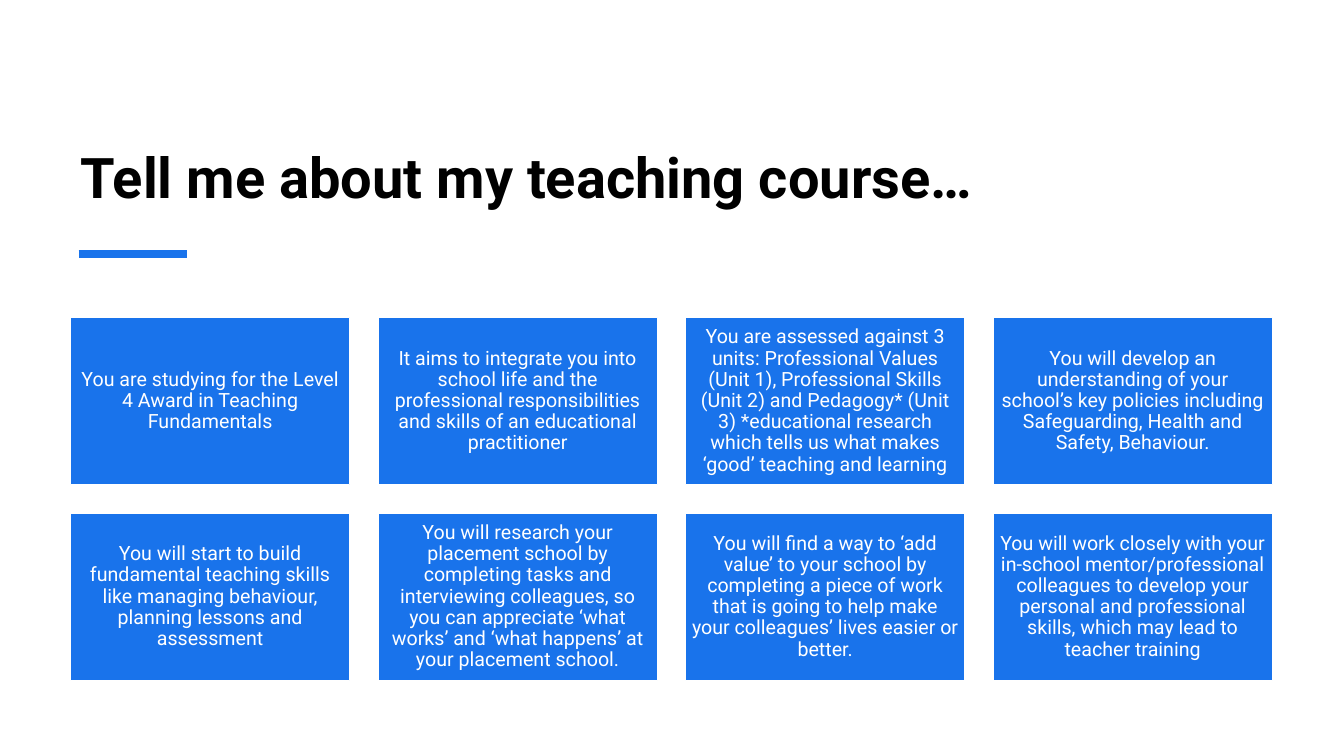
from dataclasses import dataclass

from lxml import etree
from pptx import Presentation
from pptx.dml.color import RGBColor
from pptx.enum.shapes import MSO_CONNECTOR, MSO_SHAPE
from pptx.enum.text import MSO_ANCHOR, MSO_AUTO_SIZE, PP_ALIGN
from pptx.oxml.ns import qn
from pptx.slide import Slide
from pptx.text.text import TextFrame
from pptx.util import Inches, Pt

RECTANGLE = MSO_SHAPE.RECTANGLE
STRAIGHT = MSO_CONNECTOR.STRAIGHT
LEFT, CENTER = PP_ALIGN.LEFT, PP_ALIGN.CENTER
MIDDLE, BOTTOM = MSO_ANCHOR.MIDDLE, MSO_ANCHOR.BOTTOM
NO_AUTOFIT = MSO_AUTO_SIZE.NONE
TITLE_ONLY = 5


@dataclass(frozen=True)
class Theme:
    font: str = "Roboto"
    blue: RGBColor = RGBColor(0x19, 0x73, 0xEB)
    white: RGBColor = RGBColor(0xFF, 0xFF, 0xFF)
    black: RGBColor = RGBColor(0x00, 0x00, 0x00)
    title_size: int = 40
    card_size: int = 14


@dataclass(frozen=True)
class Card:
    column: int
    row: int
    text: str


THEME = Theme()
COLUMNS = 4
GRID_LEFT, GRID_TOP = 0.7, 3.15
CARD_WIDTH, CARD_HEIGHT = 2.77, 1.66
COLUMN_STEP, ROW_STEP = 3.05, 1.94
CARD_INSET = 0.06

TITLE = "Tell me about my teaching course…"
COURSE_FACTS = [
    "You are studying for the Level 4 Award in Teaching Fundamentals",
    "It aims to integrate you into school life and the professional "
    "responsibilities and skills of an educational practitioner",
    "You are assessed against 3 units: Professional Values (Unit 1), "
    "Professional Skills (Unit 2) and Pedagogy* (Unit 3) *educational research "
    "which tells us what makes ‘good’ teaching and learning",
    "You will develop an understanding of your school’s key policies including "
    "Safeguarding, Health and Safety, Behaviour.",
    "You will start to build fundamental teaching skills like managing "
    "behaviour, planning lessons and assessment",
    "You will research your placement school by completing tasks and "
    "interviewing colleagues, so you can appreciate ‘what works’ and "
    "‘what happens’ at your placement school.",
    "You will find a way to ‘add value’ to your school by completing a piece of "
    "work that is going to help make your colleagues’ lives easier or better.",
    "You will work closely with your in-school mentor/professional colleagues "
    "to develop your personal and professional skills, which may lead to "
    "teacher training",
]
CARDS = [Card(i % COLUMNS, i // COLUMNS, text) for i, text in enumerate(COURSE_FACTS)]


def write_text(tf: TextFrame, text: str, *, size: int, color: RGBColor,
               bold: bool = False, align: PP_ALIGN = LEFT,
               anchor: MSO_ANCHOR = MIDDLE, line_spacing: float = 1.0) -> None:
    tf.word_wrap = True
    tf.auto_size = NO_AUTOFIT
    tf.vertical_anchor = anchor
    p = tf.paragraphs[0]
    p.alignment = align
    p.line_spacing = line_spacing
    r = p.add_run()
    r.text = text
    r.font.name = THEME.font
    r.font.size = Pt(size)
    r.font.bold = bold
    r.font.color.rgb = color


def add_title(s: Slide) -> None:
    title = s.shapes.title
    title.left, title.top = Inches(0.7), Inches(0.62)
    title.width, title.height = Inches(11.91), Inches(1.52)
    write_text(title.text_frame, TITLE, size=THEME.title_size, color=THEME.black,
               bold=True, anchor=BOTTOM, line_spacing=0.9)


def add_card(s: Slide, card: Card) -> None:
    sp = s.shapes.add_shape(
        RECTANGLE,
        Inches(GRID_LEFT + card.column * COLUMN_STEP),
        Inches(GRID_TOP + card.row * ROW_STEP),
        Inches(CARD_WIDTH), Inches(CARD_HEIGHT))
    sp.shadow.inherit = False
    sp.fill.solid()
    sp.fill.fore_color.rgb = THEME.blue
    sp.line.color.rgb = THEME.white
    sp.line.width = Pt(1)
    tf = sp.text_frame
    tf.margin_left = tf.margin_right = Inches(CARD_INSET)
    tf.margin_top = tf.margin_bottom = Inches(CARD_INSET)
    write_text(tf, card.text, size=THEME.card_size, color=THEME.white,
               align=CENTER, line_spacing=0.9)


def add_accent_line(s: Slide) -> None:
    y = Inches(2.52)
    line = s.shapes.add_connector(STRAIGHT, Inches(0.78), y, Inches(1.85), y)
    line.line.color.rgb = THEME.blue
    line.line.width = Pt(6)
    etree.SubElement(line._element.spPr, qn("a:effectLst"))


def main() -> None:
    prs = Presentation()
    prs.slide_width, prs.slide_height = Inches(13.33), Inches(7.5)
    s = prs.slides.add_slide(prs.slide_layouts[TITLE_ONLY])
    s.background.fill.solid()
    s.background.fill.fore_color.rgb = THEME.white
    add_title(s)
    for card in CARDS:
        add_card(s, card)
    add_accent_line(s)
    prs.save("out.pptx")


if __name__ == "__main__":
    main()
